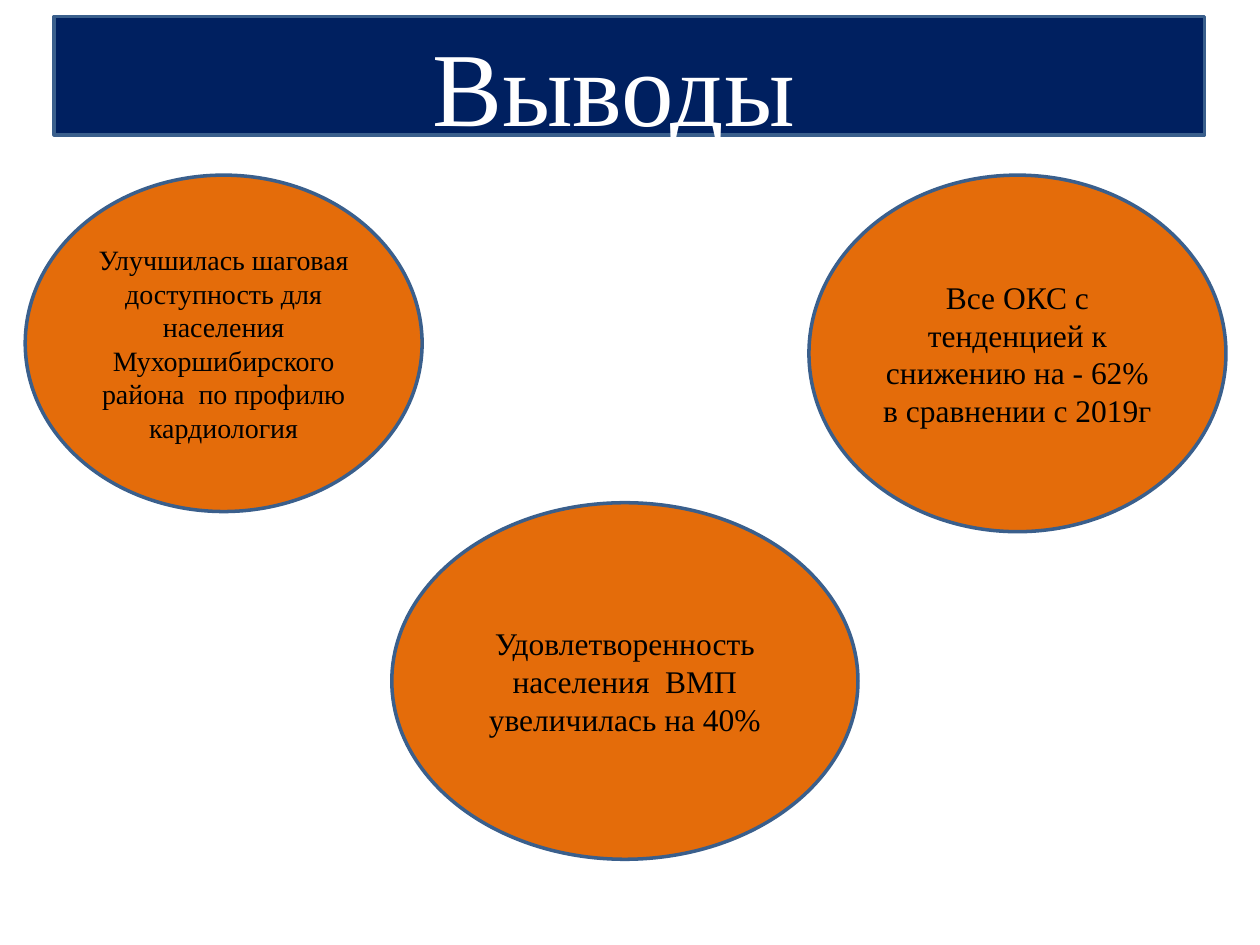
import pptx
import pptx.util
import pptx.dml.color
import pptx.enum.shapes
import pptx.enum.text
import pptx.oxml.ns
from lxml import etree

WIDTH, HEIGHT = 10, 7.5
COLOURS = {
    "banner": "002060",
    "circle": "E46C0A",
    "outline": "3A5F8C",
    "title": "FFFFFF",
    "body": "000000",
}
FONT = "Times New Roman"
UPPER_ROW, LOWER_ROW = 1.39, 3.99
CONCLUSIONS = [
    ("Улучшилась шаговая доступность для населения "
     "Мухоршибирского района  по профилю кардиология",
     (0.2, UPPER_ROW, 3.15, 2.67), 16),
    ("Все ОКС с тенденцией к снижению на - 62% в сравнении с 2019г",
     (6.42, UPPER_ROW, 3.31, 2.83), 18),
    ("Удовлетворенность населения  ВМП увеличилась на 40%",
     (3.11, LOWER_ROW, 3.7, 2.83), 18),
]


def colour(name):
    return pptx.dml.color.RGBColor.from_string(COLOURS[name])


def set_attributes(target, values):
    for name, value in values.items():
        setattr(target, name, value)


def paint(shape, fill):
    shape.fill.solid()
    shape.fill.fore_color.rgb = colour(fill)
    shape.line.color.rgb = colour("outline")
    shape.line.width = pptx.util.Pt(2)


def write_centred(shape, spans, text_colour):
    """Fill the shape with one centred paragraph of (text, size) spans."""
    frame = shape.text_frame
    set_attributes(frame, {
        "word_wrap": True,
        "auto_size": pptx.enum.text.MSO_AUTO_SIZE.NONE,
        "vertical_anchor": pptx.enum.text.MSO_ANCHOR.MIDDLE,
    })
    para = frame.paragraphs[0]
    para.alignment = pptx.enum.text.PP_ALIGN.CENTER
    for text, size in spans:
        span = para.add_run()
        span.text = text
        set_attributes(span.font, {"name": FONT, "size": pptx.util.Pt(size)})
        span.font.color.rgb = colour(text_colour)


def format_title(title):
    """Turn the title placeholder into a rounded banner."""
    places = zip(("left", "top", "width", "height"), (0.43, 0.13, 9.13, 0.94))
    set_attributes(title, {name: pptx.util.Inches(value) for name, value in places})
    qn = pptx.oxml.ns.qn
    geometry = etree.SubElement(title.element.spPr, qn("a:prstGeom"), prst="roundRect")
    etree.SubElement(geometry, qn("a:avLst"))
    paint(title, "banner")
    write_centred(title, [("Выводы", 60), (" ", 72)], "title")


def add_conclusion(page, text, place, size):
    circle = page.shapes.add_shape(
        pptx.enum.shapes.MSO_SHAPE.OVAL, *map(pptx.util.Inches, place))
    circle.shadow.inherit = False
    paint(circle, "circle")
    write_centred(circle, [(text, size)], "body")


def main():
    deck = pptx.Presentation()
    deck.slide_width = pptx.util.Inches(WIDTH)
    deck.slide_height = pptx.util.Inches(HEIGHT)
    page = deck.slides.add_slide(deck.slide_layouts.get_by_name("Title Only"))
    format_title(page.shapes.title)
    for text, place, size in CONCLUSIONS:
        add_conclusion(page, text, place, size)
    deck.save("out.pptx")


if __name__ == "__main__":
    main()
